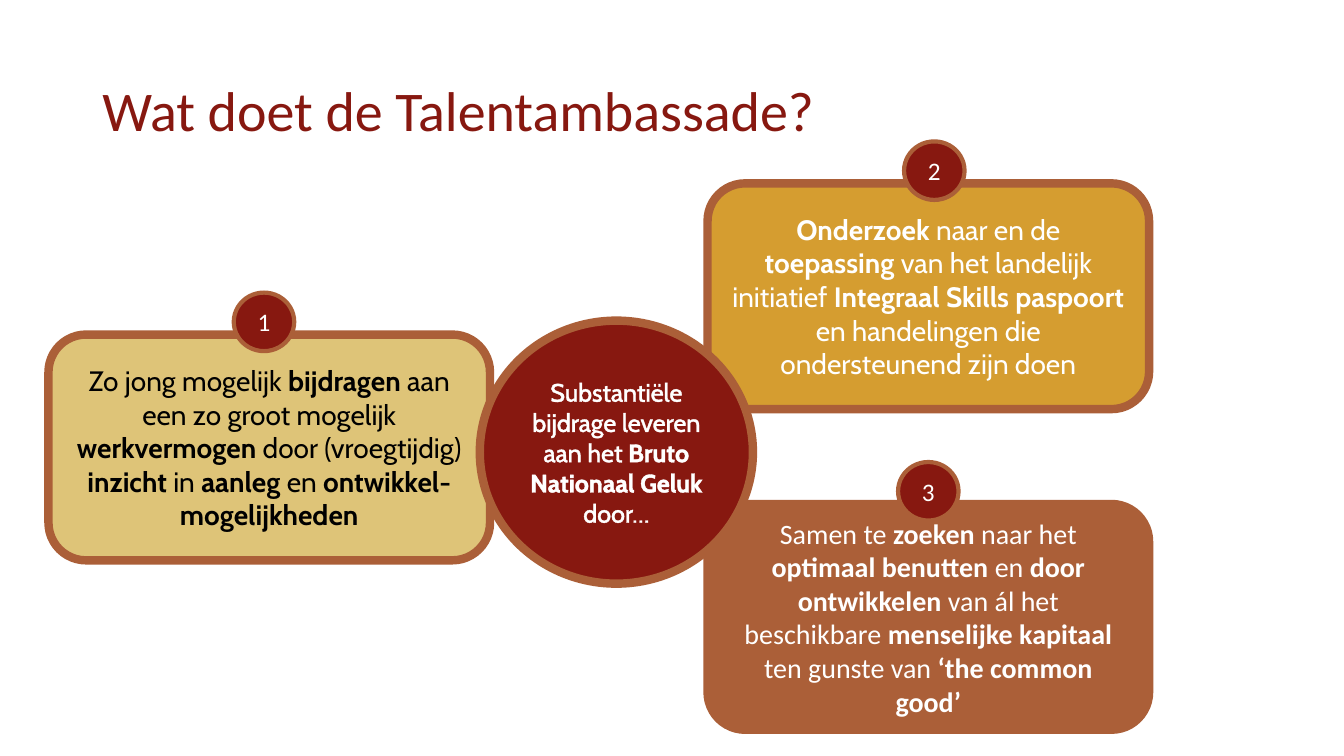
from lxml import etree
from pptx import Presentation
from pptx.dml.color import RGBColor
from pptx.enum.shapes import MSO_SHAPE
from pptx.enum.text import MSO_ANCHOR, PP_ALIGN
from pptx.oxml.ns import qn
from pptx.util import Pt

ROUNDED, ELLIPSE = MSO_SHAPE.ROUNDED_RECTANGLE, MSO_SHAPE.OVAL
MIDDLE, CENTER = MSO_ANCHOR.MIDDLE, PP_ALIGN.CENTER

RED, BROWN, GOLD, SAND = "871810", "AB5F38", "D59D30", "DEC478"
WHITE, BLACK = "FFFFFF", "000000"

# Stretches between asterisks are bold.
TITLE = "Wat doet de Talentambassade?"
GOAL = "Substantiële bijdrage leveren aan het *Bruto Nationaal Geluk *door…"

# number, left, top, badge shift from centre, fill, text colour, font, text
CARDS = [
    ("3", 505.4, 360, 0, BROWN, WHITE, "Calibri",
     "Samen te *zoeken* naar het *optimaal benutten *en *door ontwikkelen* van ál het "
     "beschikbare *menselijke kapitaal* ten gunste van *‘the common good’*"),
    ("2", 505.4, 131, 4.3, GOLD, WHITE, "Cabin",
     "*Onderzoek *naar en de *toepassing* van het landelijk initiatief "
     "*Integraal Skills paspoort* en handelingen die ondersteunend zijn doen"),
    ("1", 34.6, 239, -3.7, SAND, BLACK, "Cabin",
     "Zo jong mogelijk *bijdragen *aan een zo groot mogelijk *werkvermogen* door "
     "(vroegtijdig) *inzicht* in *aanleg* en *ontwikkel-mogelijkheden*"),
]
CARD_W, CARD_H = 315.4, 161.3
BADGE_W, BADGE_H, BADGE_RISE = 43.2, 41.8, 30


def color(hex_code):
    return RGBColor.from_string(hex_code)


def write(shape, text, font, size, text_color):
    """Fill the shape with one vertically centred paragraph and return it."""
    frame = shape.text_frame
    frame.word_wrap = True
    frame.vertical_anchor = MIDDLE
    paragraph = frame.paragraphs[0]
    for i, part in enumerate(text.split("*")):
        if part:
            run = paragraph.add_run()
            run.text = part
            if i % 2:
                run.font.bold = True
    paragraph.font.name = font
    paragraph.font.size = Pt(size)
    paragraph.font.color.rgb = color(text_color)
    return paragraph


def add_block(kind, box, fill, line_width, text, font, size, text_color=WHITE):
    shape = slide.shapes.add_shape(kind, *map(Pt, box))
    shape.shadow.inherit = False
    shape.fill.solid()
    shape.fill.fore_color.rgb = color(fill)
    shape.line.color.rgb = color(BROWN)
    shape.line.width = Pt(line_width)
    paragraph = write(shape, text, font, size, text_color)
    paragraph.alignment = CENTER
    return paragraph


def outline_text(paragraph, hex_code, width):
    for run in paragraph.runs:
        line = etree.Element(qn("a:ln"), w=str(Pt(width)))
        fill = etree.SubElement(line, qn("a:solidFill"))
        etree.SubElement(fill, qn("a:srgbClr"), val=hex_code)
        run.font._element.insert(0, line)


prs = Presentation()
prs.slide_width, prs.slide_height = Pt(960), Pt(540)
slide = prs.slides.add_slide(prs.slide_layouts[6])

for number, left, top, shift, fill, text_color, font, text in CARDS:
    add_block(ROUNDED, (left, top, CARD_W, CARD_H), fill, 6, text, font, 20, text_color)

title = slide.shapes.add_textbox(Pt(66), Pt(28.8), Pt(780), Pt(104.4))
write(title, TITLE, "Calibri", 40, RED).line_spacing = 0.9

goal = add_block(ELLIPSE, (342.7, 229, 195.1, 187.9), RED, 6, GOAL, "Cabin", 18)
outline_text(goal, WHITE, 0.75)

for number, left, top, shift, *_ in reversed(CARDS):
    badge_left = left + (CARD_W - BADGE_W) / 2 + shift
    add_block(ELLIPSE, (badge_left, top - BADGE_RISE, BADGE_W, BADGE_H),
              RED, 3, number, "Calibri", 18)

prs.save("out.pptx")
